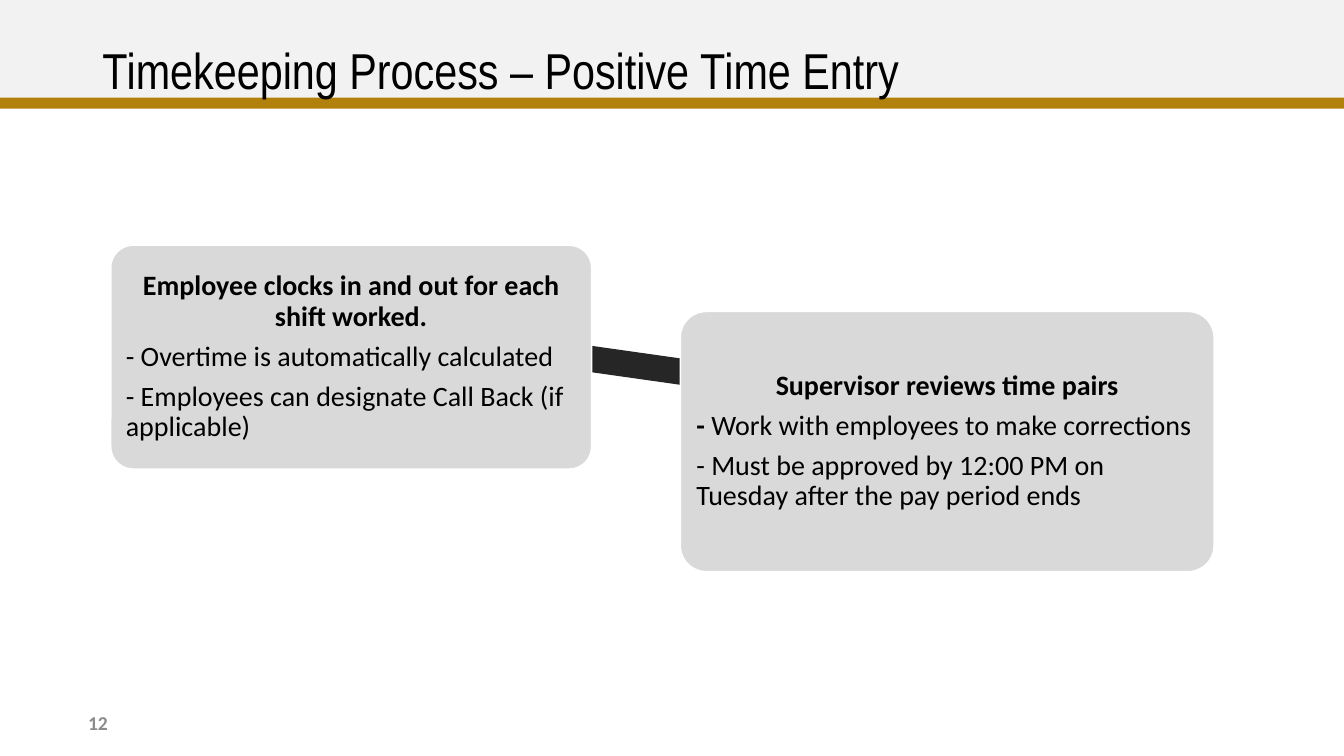
"""Build the positive time entry slide: two process cards joined by a bar."""
from math import atan2, degrees, hypot

from pptx import Presentation
from pptx.dml.color import RGBColor
from pptx.enum.shapes import MSO_SHAPE
from pptx.enum.text import MSO_ANCHOR, PP_ALIGN
from pptx.util import Pt

RECT, ROUNDED = MSO_SHAPE.RECTANGLE, MSO_SHAPE.ROUNDED_RECTANGLE
LEFT, CENTER, RIGHT = PP_ALIGN.LEFT, PP_ALIGN.CENTER, PP_ALIGN.RIGHT
MIDDLE = MSO_ANCHOR.MIDDLE

BLACK, WHITE, GRAY = "000000", "FFFFFF", "8C8C8C"
BODY_FONT, TITLE_FONT = "Calibri", "Arial Narrow"
TITLE = "Timekeeping Process – Positive Time Entry"
PAGE_NUMBER = "12"
BANDS = [
    ((0, 0, 960, 76.3), "F2F2F2"),
    ((0, 69.8, 960, 7.9), "B1810B"),
]
CARDS = [
    ((79.2, 175.2, 343.4, 159.8), [
        (CENTER, [("Employee clocks in and out for each shift worked.", True)]),
        (LEFT, [("- Overtime is automatically calculated", False)]),
        (LEFT, [("- Employees can designate Call Back (if applicable)", False)]),
    ]),
    ((486, 222.5, 381.2, 185.8), [
        (CENTER, [("Supervisor reviews time pairs", True)]),
        (LEFT, [("- ", True), ("Work with employees to make corrections", False)]),
        (LEFT, [("- Must be approved by 12:00 PM on Tuesday after the pay period ends", False)]),
    ]),
]
BAR_HEIGHT = 18.7
BAR_SHIFT = (-62, -31.7)


def color(hex_code):
    return RGBColor.from_string(hex_code)


def add_block(page, kind, bounds, fill):
    block = page.shapes.add_shape(kind, *map(Pt, bounds))
    block.shadow.inherit = False
    block.fill.solid()
    block.fill.fore_color.rgb = color(fill)
    block.line.fill.background()
    return block


def write(frame, paragraphs, size, font=BODY_FONT, ink=BLACK, spacing=0.9, after=0):
    frame.word_wrap = True
    frame.vertical_anchor = MIDDLE
    for index, (alignment, spans) in enumerate(paragraphs):
        para = frame.add_paragraph() if index else frame.paragraphs[0]
        para.alignment = alignment
        para.line_spacing = spacing
        para.space_after = Pt(after)
        for text, bold in spans:
            span = para.add_run()
            span.text = text
            span.font.name = font
            span.font.size = Pt(size)
            span.font.bold = bold
            span.font.color.rgb = color(ink)


def add_bar(page, first, second):
    """Lay a bar parallel to the line between the card centers."""
    centers = [(x + w / 2, y + h / 2) for x, y, w, h in (first, second)]
    run, rise = (b - a for a, b in zip(*centers))
    length = hypot(run, rise)
    middle_x, middle_y = ((a + b) / 2 + shift for a, b, shift in zip(*centers, BAR_SHIFT))
    bounds = (middle_x - length / 2, middle_y - BAR_HEIGHT / 2, length, BAR_HEIGHT)
    bar = add_block(page, RECT, bounds, "262626")
    bar.rotation = degrees(atan2(rise, run))


def add_card(page, bounds, paragraphs):
    card = add_block(page, ROUNDED, bounds, "D9D9D9")
    card.adjustments[0] = 0.1
    card.line.color.rgb = color(WHITE)
    card.line.width = Pt(1)
    frame = card.text_frame
    frame.margin_left = frame.margin_right = Pt(6)
    frame.margin_top = frame.margin_bottom = Pt(6)
    write(frame, paragraphs, 20, after=7)


def main():
    deck = Presentation()
    deck.slide_width, deck.slide_height = Pt(960), Pt(540)
    page = deck.slides.add_slide(deck.slide_layouts[6])
    for bounds, fill in BANDS:
        add_block(page, RECT, bounds, fill)
    title_box = page.shapes.add_textbox(Pt(66), Pt(28.8), Pt(828), Pt(47.5))
    write(title_box.text_frame, [(LEFT, [(TITLE, False)])], 36, TITLE_FONT)
    number_box = page.shapes.add_textbox(Pt(48.2), Pt(501.8), Pt(36), Pt(28.8))
    write(number_box.text_frame, [(RIGHT, [(PAGE_NUMBER, True)])], 14, ink=GRAY, spacing=1.0)
    add_bar(page, *(bounds for bounds, _ in CARDS))
    for bounds, paragraphs in CARDS:
        add_card(page, bounds, paragraphs)
    deck.save("out.pptx")


if __name__ == "__main__":
    main()
